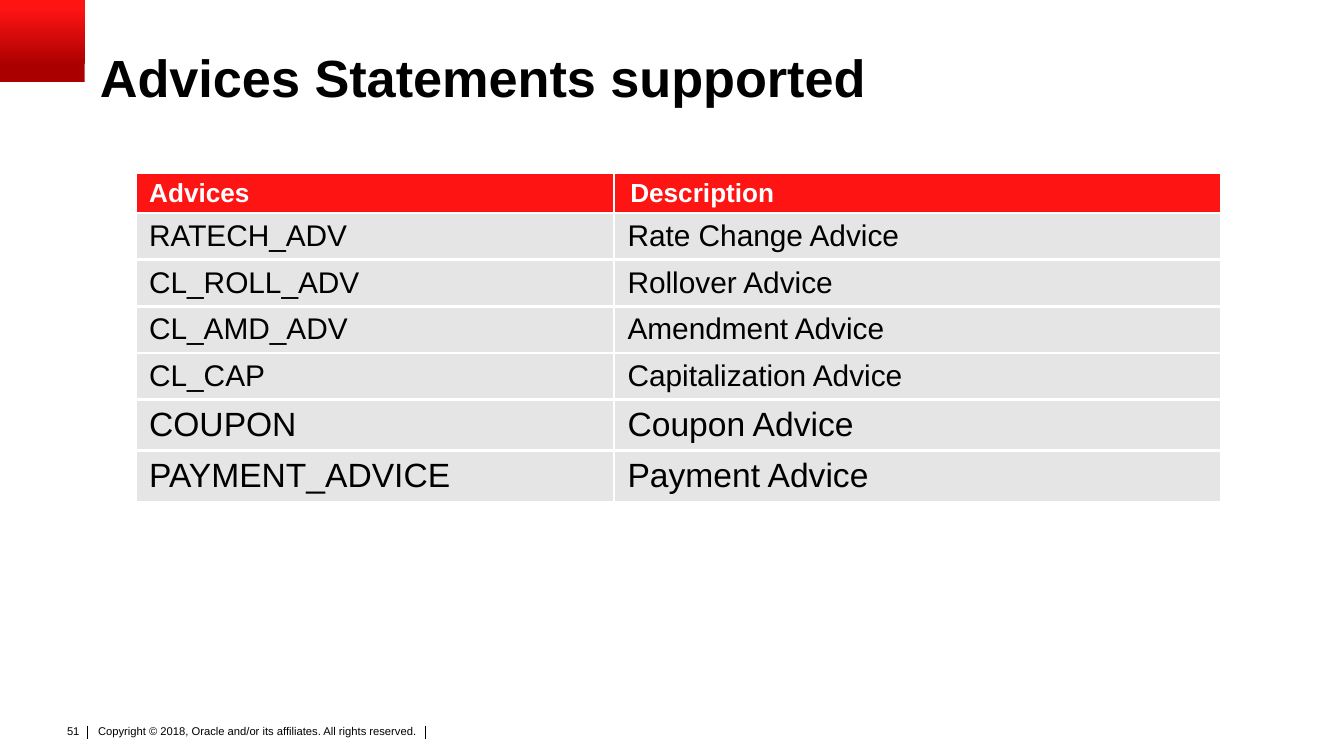
from lxml.etree import SubElement
from pptx import Presentation
from pptx.dml.color import RGBColor
from pptx.enum.shapes import MSO_CONNECTOR, MSO_SHAPE
from pptx.enum.text import MSO_ANCHOR, PP_ALIGN
from pptx.oxml.ns import qn
from pptx.util import Inches, Pt

COLORS = {"ink": "000000", "white": "FFFFFF", "red": "FF1414",
          "dark": "AA0000", "grey": "E5E5E5"}
WIDE = Inches(10)
HIGH = WIDE * 9 // 16

# Advice code, description, text size
ADVICES = [
    ("RATECH_ADV", "Rate Change Advice", 16),
    ("CL_ROLL_ADV", "Rollover Advice", 16),
    ("CL_AMD_ADV", "Amendment Advice", 16),
    ("CL_CAP", "Capitalization Advice", 16),
    ("COUPON", "Coupon Advice", 18),
    ("PAYMENT_ADVICE", "Payment Advice", 18),
]
ROWS = {14: 5.3, 16: 6.18, 18: 6.75}  # row height for each text size


def color(name):
    return RGBColor.from_string(COLORS[name])


def across(part):
    """Percent of the slide's width."""
    return round(WIDE * part / 100)


def down(part):
    """Percent of the slide's height."""
    return round(HIGH * part / 100)


def area(left, top, width, height):
    return across(left), down(top), across(width), down(height)


def write(frame, text, size, ink="ink", bold=False, align=PP_ALIGN.LEFT,
          space=None):
    para = frame.paragraphs[0]
    para.text = text
    para.alignment = align
    if space:
        para.line_spacing = space
    font = para.runs[0].font
    font.name, font.size, font.bold = "Arial", Pt(size), bold
    font.color.rgb = color(ink)


def inset(item, side, edge):
    item.margin_left = item.margin_right = Inches(side)
    item.margin_top = item.margin_bottom = Inches(edge)


def label(slide, box, text, side, edge, wrap=True, anchor=MSO_ANCHOR.TOP,
          **style):
    frame = slide.shapes.add_textbox(*area(*box)).text_frame
    frame.word_wrap = wrap
    frame.vertical_anchor = anchor
    inset(frame, side, edge)
    write(frame, text, **style)


def rule(slide, left, top, end):
    line = slide.shapes.add_connector(
        MSO_CONNECTOR.STRAIGHT, across(left), down(top), across(left), down(end))
    line.line.width = Pt(0.5)
    line.line.color.rgb = color("ink")
    SubElement(line._element.spPr, qn("a:effectLst"))


def corner(slide):
    block = slide.shapes.add_shape(MSO_SHAPE.RECTANGLE, *area(0, 0, 6.3, 10.85))
    block.shadow.inherit = False
    block.line.fill.background()
    block.fill.gradient()
    block.fill.gradient_angle = 90
    stops = [(0.2, "dark"), (0.9, "red")]
    for stop, (place, name) in zip(block.fill.gradient_stops, stops):
        stop.position = place
        stop.color.rgb = color(name)


def border(cell):
    props = cell._tc.get_or_add_tcPr()
    for side in ("lnL", "lnR", "lnT", "lnB"):
        line = SubElement(props, qn("a:" + side), w=str(Pt(1.5)))
        fill = SubElement(line, qn("a:solidFill"))
        SubElement(fill, qn("a:srgbClr"), val=COLORS["white"])


def fill_cell(cell, text, back, edge, **style):
    border(cell)
    cell.fill.solid()
    cell.fill.fore_color.rgb = color(back)
    inset(cell, 0.1, edge)
    cell.vertical_anchor = MSO_ANCHOR.MIDDLE
    write(cell.text_frame, text, **style)


def grid(slide):
    lines = [("Advices", "Description", 14)] + ADVICES
    total = sum(ROWS[size] for *_, size in lines)
    table = slide.shapes.add_table(
        len(lines), 2, *area(10.1, 22.87, 80.8, total)).table
    for column, width in zip(table.columns, (35.6, 45.2)):
        column.width = across(width)
    for row, (*texts, size) in enumerate(lines):
        table.rows[row].height = down(ROWS[size])
        head = row == 0
        for cell, text in zip(table.rows[row].cells, texts):
            fill_cell(cell, text, "red" if head else "grey",
                      0.03 if head else 0.04, size=size,
                      ink="white" if head else "ink", bold=head)
    table.cell(0, 1).margin_left = Inches(0.12)


def heading(slide, text):
    title = slide.shapes.title
    title.left, title.top, title.width, title.height = area(7.43, 6.7, 90, 7.8)
    frame = title.text_frame
    frame.word_wrap = True
    frame.vertical_anchor = MSO_ANCHOR.MIDDLE
    inset(frame, 0, 0)
    write(frame, text, 28, bold=True, space=0.9)


def footer(slide):
    label(slide, (6.9, 95.5, 27.4, 4.27),
          "Copyright © 2018, Oracle and/or its affiliates. All rights reserved.",
          0.04, 0.02, size=6)
    for left in (6.5, 31.65):
        rule(slide, left, 96, 97.8)
    label(slide, (3.9, 94.95, 3, 3.56), "51", 0.1, 0.05, wrap=False,
          anchor=MSO_ANCHOR.MIDDLE, size=6, align=PP_ALIGN.RIGHT)


def main():
    deck = Presentation()
    deck.slide_width, deck.slide_height = WIDE, HIGH
    slide = deck.slides.add_slide(deck.slide_layouts[5])
    # Frame of the slide
    footer(slide)
    corner(slide)
    # Content
    heading(slide, "Advices Statements supported")
    grid(slide)
    deck.save("out.pptx")


if __name__ == "__main__":
    main()
